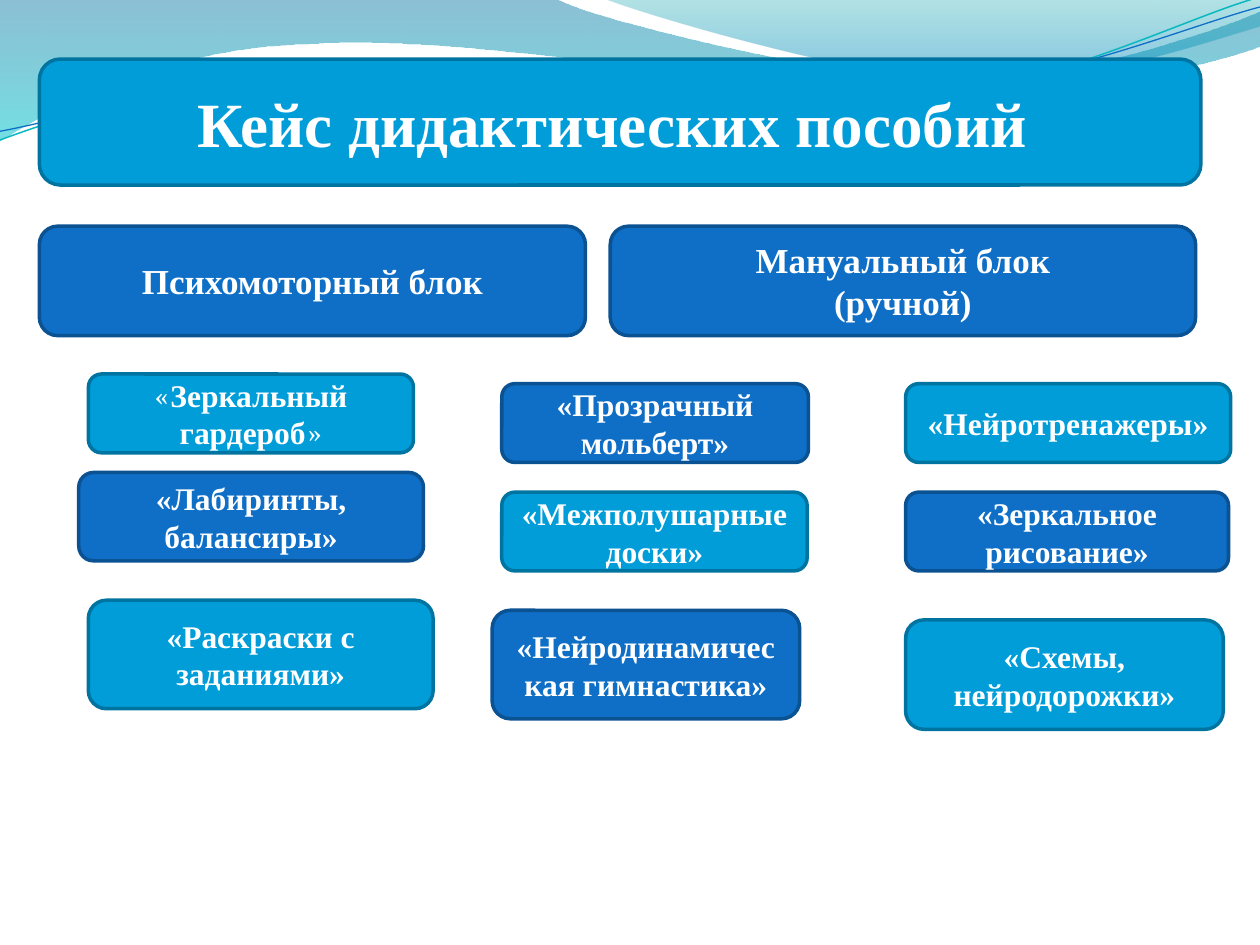
import pptx
import pptx.dml.color
import pptx.enum.shapes
import pptx.enum.text
import pptx.oxml
import pptx.oxml.ns
import pptx.util

Pt = pptx.util.Pt
RGBColor = pptx.dml.color.RGBColor
NAMESPACE = pptx.oxml.ns.nsdecls("a")

WHITE = RGBColor(0xFF, 0xFF, 0xFF)
BLUE = RGBColor(0x0F, 0x6F, 0xC6)
DARK_BLUE = RGBColor(0x0B, 0x52, 0x92)
SKY = RGBColor(0x00, 0x9D, 0xD9)
DARK_SKY = RGBColor(0x00, 0x74, 0xA1)
AQUA = RGBColor(0x00, 0xC6, 0xCF)
TEAL = RGBColor(0x00, 0xA1, 0xA9)
OCEAN = RGBColor(0x00, 0x8B, 0xBF)
TURQUOISE = RGBColor(0x0A, 0xB8, 0xBF)

BLUE_STYLE = (BLUE, DARK_BLUE)
SKY_STYLE = (SKY, DARK_SKY)
UNITS = 100

LEFT_WAVE = [(0, 0), (317, -1), (343, 12, 478, 45, 546, 45), (614, 45, 690, 19, 720, 6.5),
             (721, 26), (708, 32, 626, 55, 537, 54), (448, 54, 275, 20, 185, 24.5),
             (93, 26, 33, 60, -1, 81)]
RIGHT_WAVE = [(345, -1), (367, 8, 491, 45, 554, 47), (616, 50, 692, 23, 720, 15), (720, 0)]
UPPER_STROKE = [(0, 80), (35, 67, 114, 41, 199, 37.5), (284, 34, 427, 64, 513, 57.5),
                (600, 51, 675, 11, 719, -1.5)]
LOWER_STROKE = [(0, 75), (34, 69, 118, 44, 204, 40), (290, 36, 430, 60.5, 516, 54),
                (602, 48, 678, 15, 720, 4)]

BLOCKS = [
    ("Психомоторный блок", 22.5, 312),
    ("Мануальный блок\n(ручной)", 348.75, 334.5),
]
CARDS = [
    ("«Прозрачный мольберт»", 286.75, 219.25, 175.25, 45, BLUE_STYLE),
    ("«Лабиринты, балансиры»", 45, 270, 197, 50.5, BLUE_STYLE),
    ("«Нейротренажеры»", 517.5, 219.25, 185.75, 45, SKY_STYLE),
    ("«Межполушарные доски»", 286.75, 281.25, 174.5, 45, SKY_STYLE),
    ("«Зеркальное рисование»", 517.5, 281.25, 184.5, 45, BLUE_STYLE),
    ("«Раскраски с заданиями»", 50.5, 343, 197, 62, SKY_STYLE),
    ("«Нейродинамическая гимнастика»", 281.25, 348.75, 175.75, 62, BLUE_STYLE),
    ("«Схемы, нейродорожки»", 517.5, 354.25, 181.5, 62.5, SKY_STYLE),
]


class SlideBuilder:
    font = "Times New Roman"
    quote_font = "Vollkorn"
    border = 2

    def __init__(self, slide):
        self.slide = slide

    def outline(self, segments, close):
        anchors = [(segment[-2] * UNITS, segment[-1] * UNITS) for segment in segments]
        builder = self.slide.shapes.build_freeform(*anchors[0], scale=Pt(1) / UNITS)
        builder.add_line_segments(anchors[1:], close=close)
        shape = builder.convert_to_shape()
        shape.shadow.inherit = False
        left = min(x for x, _ in anchors)
        top = min(y for _, y in anchors)
        lines = list(shape.element.spPr.iter(pptx.oxml.ns.qn("a:lnTo")))
        for line, segment in zip(lines, segments[1:]):
            if len(segment) == 6:
                points = "".join(
                    f'<a:pt x="{round(x * UNITS - left)}" y="{round(y * UNITS - top)}"/>'
                    for x, y in zip(segment[::2], segment[1::2]))
                line.getparent().replace(line, pptx.oxml.parse_xml(
                    f"<a:cubicBezTo {NAMESPACE}>{points}</a:cubicBezTo>"))
        return shape

    def wave(self, segments, stops):
        shape = self.outline(segments, True)
        shape.line.fill.background()
        shape.fill.gradient()
        shape.fill.gradient_angle = 270
        for stop, (position, color, _) in zip(shape.fill.gradient_stops, stops):
            stop.position = position
            stop.color.rgb = color
        colors = shape.element.spPr.iter(pptx.oxml.ns.qn("a:srgbClr"))
        for element, (_, _, opacity) in zip(colors, stops):
            element.append(pptx.oxml.parse_xml(
                f'<a:alpha {NAMESPACE} val="{opacity * 1000}"/>'))

    def stroke(self, segments, color, width):
        shape = self.outline(segments, False)
        shape.fill.background()
        shape.line.color.rgb = color
        shape.line.width = Pt(width)

    def format_run(self, run, size, font, bold):
        run.font.size = Pt(size)
        run.font.name = font
        run.font.bold = bold
        run.font.color.rgb = WHITE

    def format_text(self, shape, text, size):
        frame = shape.text_frame
        frame.text = text
        frame.word_wrap = True
        frame.auto_size = pptx.enum.text.MSO_AUTO_SIZE.NONE
        frame.vertical_anchor = pptx.enum.text.MSO_ANCHOR.MIDDLE
        for paragraph in frame.paragraphs:
            paragraph.alignment = pptx.enum.text.PP_ALIGN.CENTER
            for run in paragraph.runs:
                self.format_run(run, size, self.font, True)

    def panel(self, left, top, width, height, style):
        shape = self.slide.shapes.add_shape(
            pptx.enum.shapes.MSO_SHAPE.ROUNDED_RECTANGLE,
            *map(Pt, (left, top, width, height)))
        fill, line = style
        shape.shadow.inherit = False
        shape.fill.solid()
        shape.fill.fore_color.rgb = fill
        shape.line.color.rgb = line
        shape.line.width = Pt(self.border)
        return shape

    def card(self, text, left, top, width, height, size, style):
        shape = self.panel(left, top, width, height, style)
        self.format_text(shape, text, size)
        return shape

    def light_quote_card(self, text, left, top, width, height, size, style):
        shape = self.card("«", left, top, width, height, size, style)
        paragraph = shape.text_frame.paragraphs[0]
        self.format_run(paragraph.runs[0], size, self.quote_font, False)
        for piece, font, bold in ((text, self.font, True), ("»", self.quote_font, False)):
            run = paragraph.add_run()
            run.text = piece
            self.format_run(run, size, font, bold)

    def title(self, text, left, top, width, height, size, style):
        self.panel(left, top, width, height, style)
        shape = self.slide.shapes.title
        shape.left, shape.top, shape.width, shape.height = map(Pt, (left, top, width, height))
        self.format_text(shape, text, size)
        self.slide.shapes.element.append(shape.element)


def main():
    presentation = pptx.Presentation()
    presentation.slide_width = Pt(720)
    presentation.slide_height = Pt(540)
    builder = SlideBuilder(presentation.slides.add_slide(presentation.slide_layouts[5]))

    builder.wave(LEFT_WAVE, [(0, DARK_SKY, 45), (1, AQUA, 55)])
    builder.wave(RIGHT_WAVE, [(0, TEAL, 30), (0.8, OCEAN, 45)])
    builder.stroke(UPPER_STROKE, TURQUOISE, 0.85)
    builder.stroke(LOWER_STROKE, BLUE, 0.75)

    for text, left, width in BLOCKS:
        builder.card(text, left, 129.25, width, 62.5, 20, BLUE_STYLE)
    builder.light_quote_card("Зеркальный гардероб", 50.5, 213.75, 185.75, 45, 18, SKY_STYLE)
    for text, left, top, width, height, style in CARDS:
        builder.card(text, left, top, width, height, 18, style)
    builder.title("Кейс дидактических пособий ", 22.5, 33.75, 663.75, 72, 36, SKY_STYLE)

    presentation.save("out.pptx")


if __name__ == "__main__":
    main()
